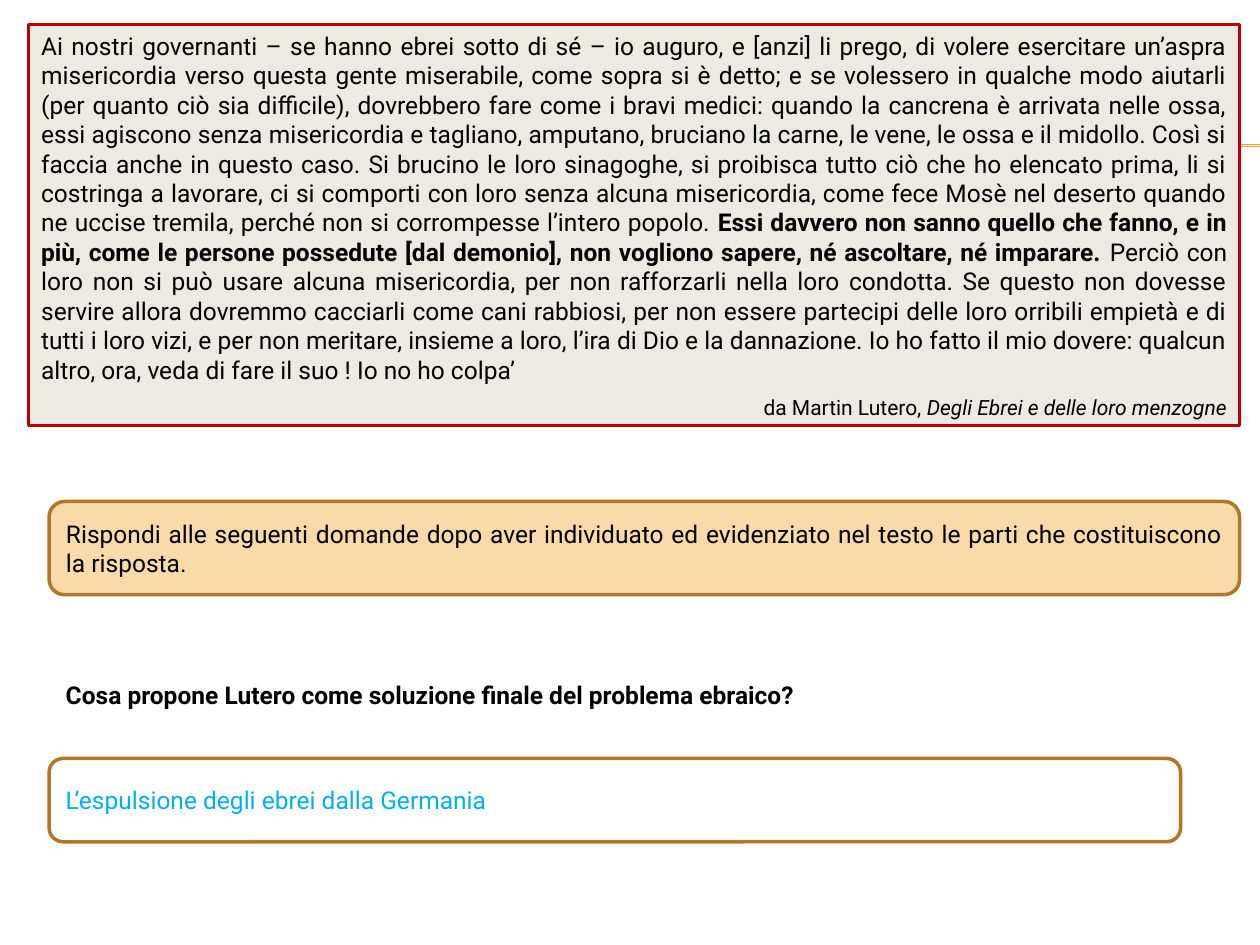
from dataclasses import dataclass

from lxml.etree import SubElement
from pptx import Presentation
from pptx.dml.color import RGBColor
from pptx.enum.shapes import MSO_CONNECTOR, MSO_SHAPE
from pptx.enum.text import MSO_ANCHOR, MSO_AUTO_SIZE, PP_ALIGN
from pptx.oxml.ns import qn
from pptx.util import Cm, Pt


@dataclass(frozen=True)
class Theme:
    font: str = "Roboto"
    body: int = 14
    source: int = 12
    ink: str = "000000"
    answer: str = "00B0F0"
    paper: str = "ECEAE3"
    passage_border: str = "C00000"
    prompt: str = "F9DAAB"
    white: str = "FFFFFF"
    border: str = "B17722"
    rule: str = "F0A22E"


THEME = Theme()
BOX_LEFT = 0.99

PASSAGE_START = (
    "Ai nostri governanti – se hanno ebrei sotto di sé – io auguro, e [anzi] li prego, "
    "di volere esercitare un’aspra misericordia verso questa gente miserabile, come sopra "
    "si è detto; e se volessero in qualche modo aiutarli (per quanto ciò sia difficile), "
    "dovrebbero fare come i bravi medici: quando la cancrena è arrivata nelle ossa, essi "
    "agiscono senza misericordia e tagliano, amputano, bruciano la carne, le vene, le ossa "
    "e il midollo. Così si faccia anche in questo caso. Si brucino le loro sinagoghe, si "
    "proibisca tutto ciò che ho elencato prima, li si costringa a lavorare, ci si comporti "
    "con loro senza alcuna misericordia, come fece Mosè nel deserto quando ne uccise "
    "tremila, perché non si corrompesse l’intero popolo. "
)
PASSAGE_KEY = (
    "Essi davvero non sanno quello che fanno, e in più, come le persone possedute "
    "[dal demonio], non vogliono sapere, né ascoltare, né imparare. "
)
PASSAGE_END = (
    "Perciò con loro non si può usare alcuna misericordia, per non rafforzarli nella loro "
    "condotta. Se questo non dovesse servire allora dovremmo cacciarli come cani rabbiosi, "
    "per non essere partecipi delle loro orribili empietà e di tutti i loro vizi, e per non "
    "meritare, insieme a loro, l’ira di Dio e la dannazione. Io ho fatto il mio dovere: "
    "qualcun altro, ora, veda di fare il suo ! Io no ho colpa’"
)
PROMPT = (
    "Rispondi alle seguenti domande dopo aver individuato ed evidenziato nel testo le parti "
    "che costituiscono la risposta."
)
QUESTION = "Cosa propone Lutero come soluzione finale del problema ebraico?"
ANSWER = "L’espulsione degli ebrei dalla Germania"


def add_rule(slide, y):
    rule = slide.shapes.add_connector(
        MSO_CONNECTOR.STRAIGHT, Cm(1.42), Cm(y), Cm(25.4), Cm(y)
    )
    rule.line.color.rgb = RGBColor.from_string(THEME.rule)
    rule.line.width = Pt(0.75)
    SubElement(rule._element.spPr, qn("a:effectLst"))


def add_panel(slide, outline, left, top, width, height, fill=None, border=None, weight=2):
    panel = slide.shapes.add_shape(outline, Cm(left), Cm(top), Cm(width), Cm(height))
    panel.shadow.inherit = False
    if fill:
        panel.fill.solid()
        panel.fill.fore_color.rgb = RGBColor.from_string(fill)
    else:
        panel.fill.background()
    if border:
        panel.line.color.rgb = RGBColor.from_string(border)
        panel.line.width = Pt(weight)
    else:
        panel.line.fill.background()
    panel.text_frame.word_wrap = True
    return panel.text_frame


def write(paragraph, parts, size=THEME.body, color=THEME.ink, align=PP_ALIGN.JUSTIFY):
    paragraph.alignment = align
    for words, bold, italic in parts:
        run = paragraph.add_run()
        run.text = words
        run.font.name = THEME.font
        run.font.size = Pt(size)
        run.font.bold = bold
        run.font.italic = italic
        run.font.color.rgb = RGBColor.from_string(color)


def add_passage(slide):
    passage = add_panel(slide, MSO_SHAPE.RECTANGLE, 0.58, 0.5, 24.41, 8.08,
                        THEME.paper, THEME.passage_border, 1.5)
    passage.auto_size = MSO_AUTO_SIZE.SHAPE_TO_FIT_TEXT
    passage.vertical_anchor = MSO_ANCHOR.TOP
    quotation = passage.paragraphs[0]
    write(quotation, [(PASSAGE_START, False, False), (PASSAGE_KEY, True, False),
                      (PASSAGE_END, False, False)])
    citation = passage.add_paragraph()
    write(citation, [("da Martin Lutero,\u00a0", False, False),
                     ("Degli Ebrei e delle loro menzogne", False, True)],
          THEME.source, align=PP_ALIGN.RIGHT)
    for paragraph in passage.paragraphs:
        paragraph.space_after = Pt(6)


def add_card(slide, words, top, width, height, fill=None, border=None,
             color=THEME.ink, bold=False):
    card = add_panel(slide, MSO_SHAPE.ROUNDED_RECTANGLE, BOX_LEFT, top, width, height,
                     fill, border)
    card.vertical_anchor = MSO_ANCHOR.MIDDLE
    write(card.paragraphs[0], [(words, bold, False)], color=color)


def main():
    deck = Presentation()
    deck.slide_width, deck.slide_height = Cm(25.4), Cm(19.05)
    slide = deck.slides.add_slide(deck.slide_layouts[6])
    for y in (2.92, 2.95):
        add_rule(slide, y)
    add_passage(slide)
    add_card(slide, PROMPT, 10.11, 24, 1.88, THEME.prompt, THEME.border)
    add_card(slide, QUESTION, 13.11, 20.04, 1.78, bold=True)
    add_card(slide, ANSWER, 15.29, 22.81, 1.68, THEME.white, THEME.border, THEME.answer)
    deck.save("out.pptx")


if __name__ == "__main__":
    main()
